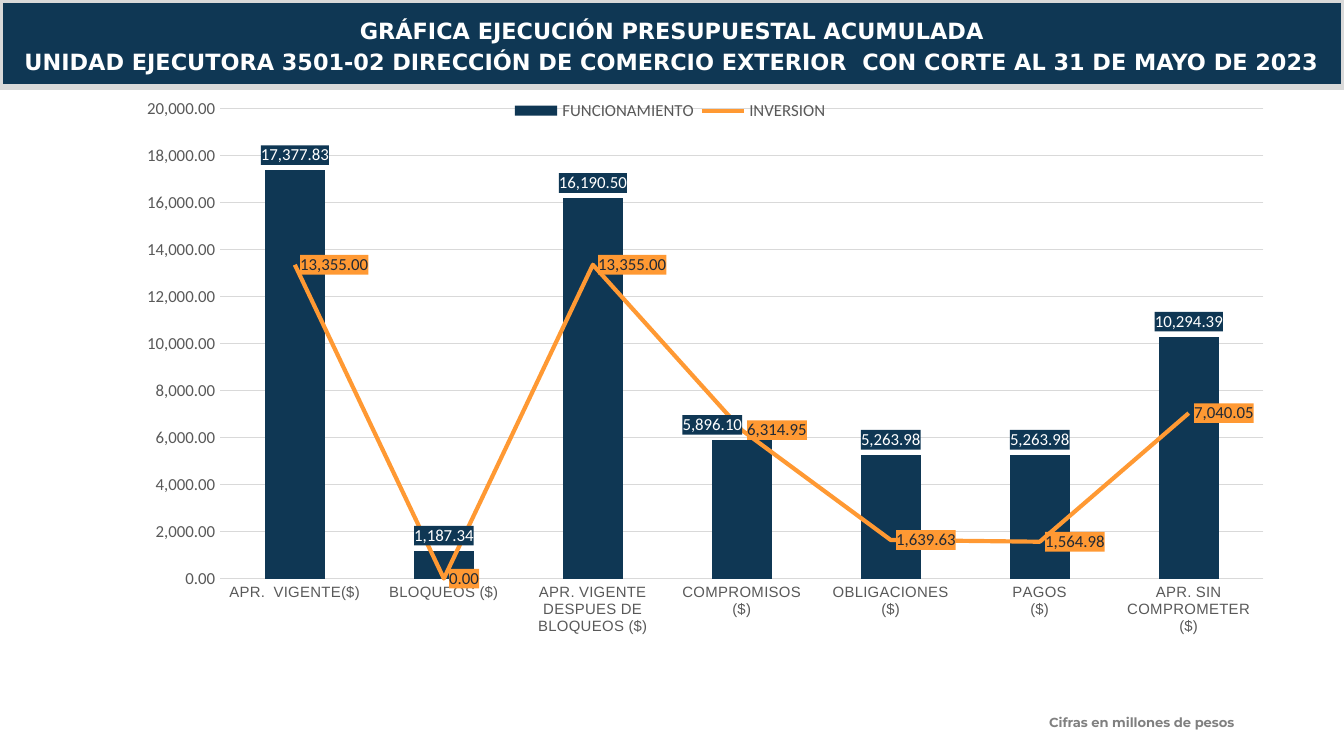
from copy import deepcopy
from dataclasses import dataclass

from lxml.etree import SubElement
from pptx import Presentation
from pptx.chart.data import CategoryChartData
from pptx.dml.color import RGBColor
from pptx.enum.chart import XL_CHART_TYPE as ChartType
from pptx.enum.chart import XL_LABEL_POSITION as LabelPos
from pptx.enum.chart import XL_LEGEND_POSITION as LegendPos
from pptx.enum.chart import XL_TICK_MARK as Tick
from pptx.enum.shapes import MSO_SHAPE as Shape
from pptx.enum.text import MSO_ANCHOR as Anchor
from pptx.enum.text import PP_ALIGN as Align
from pptx.oxml import parse_xml
from pptx.oxml.ns import nsdecls, qn
from pptx.util import Cm, Pt


@dataclass(frozen=True)
class Theme:
    navy: str = "0F3754"
    orange: str = "FF9933"
    white: str = "FFFFFF"
    dark: str = "222A35"
    text: str = "595959"
    note: str = "808080"
    rule: str = "D9D9D9"
    title_font: str = "DejaVu Sans"
    note_font: str = "Montserrat"
    chart_font: str = "Calibri"
    category_font: str = "Arial"
    title_size: float = 12
    note_size: float = 7
    category_size: float = 8
    chart_size: float = 9


@dataclass(frozen=True)
class Measure:
    name: str
    values: tuple[float, ...]
    color: str
    label_color: str
    label_pos: LabelPos


THEME = Theme()
WIDTH, HEIGHT, HEADER_H = Cm(25.4), Cm(14.29), Cm(1.65)
NUMBER_FORMAT = "#,##0.00"
TITLE = ("GRÁFICA EJECUCIÓN PRESUPUESTAL ACUMULADA",
         "UNIDAD EJECUTORA 3501-02 DIRECCIÓN DE COMERCIO EXTERIOR  CON CORTE AL 31 DE MAYO DE 2023")
CATEGORIES = ("APR.  VIGENTE($)", "BLOQUEOS ($)", "APR. VIGENTE DESPUES DE BLOQUEOS ($)",
              "COMPROMISOS\n($)", "OBLIGACIONES\n($)", "PAGOS\n($)", "APR. SIN COMPROMETER ($)")
OPERATION = Measure("FUNCIONAMIENTO ",
                    (17377.83, 1187.34, 16190.5, 5896.1, 5263.98, 5263.98, 10294.39),
                    THEME.navy, THEME.white, LabelPos.OUTSIDE_END)
INVESTMENT = Measure("INVERSION ",
                     (13355, 0, 13355, 6314.95, 1639.63, 1564.98, 7040.05),
                     THEME.orange, THEME.dark, LabelPos.RIGHT)


def set_font(font, size: float, color: str, name: str, bold: bool = False) -> None:
    font.size, font.name, font.bold = Pt(size), name, bold
    font.color.rgb = RGBColor.from_string(color)


def write_text(tf, *lines: str, size: float, color: str, font: str, bold: bool = True,
               align: Align = Align.LEFT, before: float = 0) -> None:
    tf.word_wrap = True
    for i, line in enumerate(lines):
        p = tf.add_paragraph() if i else tf.paragraphs[0]
        p.alignment, p.line_spacing, p.space_before = align, 0.9, Pt(before)
        r = p.add_run()
        r.text = line
        set_font(r.font, size, color, font, bold)


def set_line(line, color: str, width: float) -> None:
    line.color.rgb = RGBColor.from_string(color)
    line.width = Pt(width)


def manual_layout(x: float, y: float, w: float, h: float, inner: bool = False):
    """Layout in fractions of the chart's size."""
    layout = parse_xml(f"<c:layout {nsdecls('c')}><c:manualLayout/></c:layout>")
    parts = {"layoutTarget": "inner"} if inner else {}
    parts |= {"xMode": "edge", "yMode": "edge", "x": x, "y": y, "w": w, "h": h}
    for tag, value in parts.items():
        SubElement(layout[0], qn(f"c:{tag}")).set("val", str(value))
    return layout


def label_series(series, measure: Measure):
    """Show values in boxes of the series colour; return the labels element."""
    labels = series.data_labels
    labels.show_value = True
    labels.number_format, labels.number_format_is_linked = NUMBER_FORMAT, False
    labels.position = measure.label_pos
    set_font(labels.font, THEME.chart_size, measure.label_color, THEME.chart_font)
    el = labels._element
    el.find(qn("c:txPr")).addprevious(parse_xml(
        f'<c:spPr {nsdecls("c", "a")}><a:solidFill><a:srgbClr val="{measure.color}"/>'
        "</a:solidFill><a:ln><a:noFill/></a:ln></c:spPr>"))
    return el


def shift_label(labels, index: int, dx: float) -> None:
    """Move one point's label sideways by a fraction of the chart's width."""
    point = parse_xml(
        f'<c:dLbl {nsdecls("c")}><c:idx val="{index}"/><c:layout><c:manualLayout>'
        f'<c:x val="{dx}"/><c:y val="0"/></c:manualLayout></c:layout></c:dLbl>')
    for child in labels:
        if child.tag != qn("c:showLeaderLines"):
            point.append(deepcopy(child))
    labels.insert(0, point)


def move_to_line_plot(series, bar_plot) -> None:
    ser, bar = series._element, bar_plot._element
    for bar_only in ser.findall(qn("c:invertIfNegative")):
        ser.remove(bar_only)
    ser.find(qn("c:dLbls")).addprevious(
        parse_xml(f'<c:marker {nsdecls("c")}><c:symbol val="none"/></c:marker>'))
    SubElement(ser, qn("c:smooth")).set("val", "0")
    line = parse_xml(f'<c:lineChart {nsdecls("c")}><c:grouping val="standard"/>'
                     '<c:varyColors val="0"/></c:lineChart>')
    line.append(ser)
    SubElement(line, qn("c:marker")).set("val", "1")
    for axis_id in bar.findall(qn("c:axId")):
        line.append(deepcopy(axis_id))
    bar.addnext(line)


def style_axes(chart) -> None:
    cat, val = chart.category_axis, chart.value_axis
    for axis in (cat, val):
        axis.major_tick_mark = axis.minor_tick_mark = Tick.NONE
    set_font(cat.tick_labels.font, THEME.category_size, THEME.text, THEME.category_font)
    set_line(cat.format.line, THEME.rule, 0.75)
    set_font(val.tick_labels.font, THEME.chart_size, THEME.text, THEME.chart_font)
    val.tick_labels.number_format = NUMBER_FORMAT
    val.tick_labels.number_format_is_linked = False
    val.minimum_scale, val.maximum_scale, val.major_unit = 0, 20000, 2000
    val.format.line.fill.background()
    set_line(val.major_gridlines.format.line, THEME.rule, 0.75)


def add_budget_chart(s) -> None:
    data = CategoryChartData(number_format=NUMBER_FORMAT)
    data.categories = CATEGORIES
    for measure in (OPERATION, INVESTMENT):
        data.add_series(measure.name, measure.values)
    chart = s.shapes.add_chart(ChartType.COLUMN_CLUSTERED, 0, HEADER_H, WIDTH,
                               HEIGHT - HEADER_H, data).chart
    set_font(chart.font, THEME.chart_size, THEME.text, THEME.chart_font)
    chart.has_title = False
    style_axes(chart)

    plot = chart.plots[0]
    plot.gap_width, plot.vary_by_categories = 150, False
    columns, trend = plot.series
    columns.format.fill.solid()
    columns.format.fill.fore_color.rgb = RGBColor.from_string(OPERATION.color)
    set_line(trend.format.line, INVESTMENT.color, 2.25)
    shift_label(label_series(columns, OPERATION), 3, -0.022)
    label_series(trend, INVESTMENT)
    move_to_line_plot(trend, plot)

    chart.has_legend = True
    legend = chart.legend
    legend.position, legend.include_in_layout = LegendPos.TOP, True
    set_font(legend.font, THEME.chart_size, THEME.text, THEME.chart_font)
    for old in legend._element.findall(qn("c:layout")):
        legend._element.remove(old)
    legend._element.find(qn("c:legendPos")).addnext(manual_layout(0.38, 0.01, 0.24, 0.05))

    area = plot._element.getparent()
    for old in area.findall(qn("c:layout")):
        area.remove(old)
    area.insert(0, manual_layout(0.164, 0.032, 0.776, 0.703, inner=True))


def add_header(s) -> None:
    sp = s.shapes.add_shape(Shape.RECTANGLE, 0, 0, WIDTH, HEADER_H)
    sp.shadow.inherit = False
    sp.fill.solid()
    sp.fill.fore_color.rgb = RGBColor.from_string(THEME.navy)
    set_line(sp.line, THEME.rule, 3)
    tf = sp.text_frame
    tf.margin_left = tf.margin_right = tf.margin_bottom = 0
    tf.margin_top = Cm(0.15)
    tf.vertical_anchor = Anchor.MIDDLE
    write_text(tf, *TITLE, size=THEME.title_size, color=THEME.white,
               font=THEME.title_font, align=Align.CENTER, before=3.6)


def add_note(s) -> None:
    tf = s.shapes.add_textbox(Cm(19.58), Cm(13.41), Cm(4.85), Cm(0.53)).text_frame
    write_text(tf, "Cifras en millones de pesos", size=THEME.note_size,
               color=THEME.note, font=THEME.note_font, before=8)


def main() -> None:
    prs = Presentation()
    prs.slide_width, prs.slide_height = WIDTH, HEIGHT
    s = prs.slides.add_slide(prs.slide_layouts[6])
    add_header(s)
    add_note(s)
    add_budget_chart(s)
    prs.save("out.pptx")


if __name__ == "__main__":
    main()
